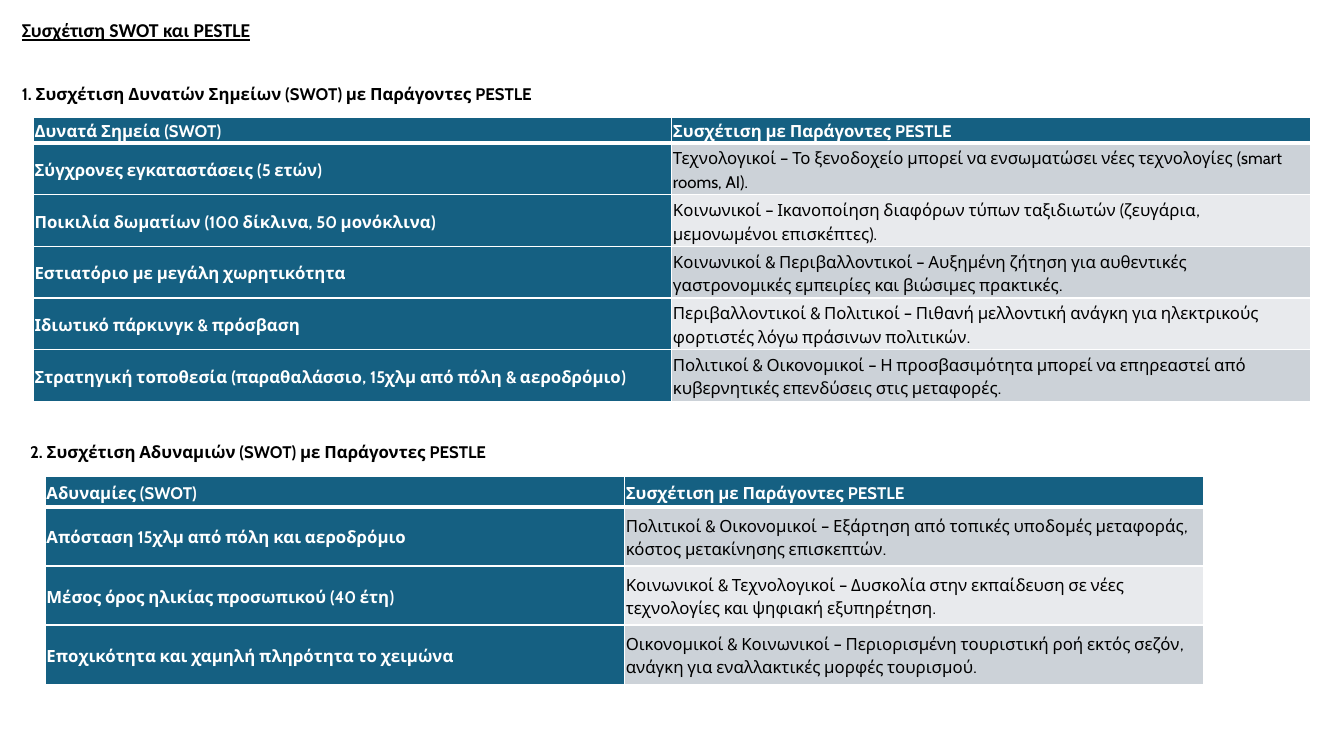
from lxml.etree import SubElement
from pptx import Presentation
from pptx.dml.color import RGBColor
from pptx.enum.text import MSO_ANCHOR
from pptx.oxml.ns import qn
from pptx.util import Cm, Pt


def style(p, size, name, color, bold=True):
    p.font.size, p.font.name, p.font.bold = Pt(size), name, bold
    p.font.color.rgb = RGBColor.from_string(color)


def add_text(s, text, x, y, w, h, size, name, anchor):
    tf = s.shapes.add_textbox(Cm(x), Cm(y), Cm(w), Cm(h)).text_frame
    tf.word_wrap = True
    tf.vertical_anchor = anchor
    p = tf.paragraphs[0]
    p.text = text
    style(p, size, name, "000000")
    return p


prs = Presentation()
prs.slide_width, prs.slide_height = Cm(33.87), Cm(19.05)
s = prs.slides.add_slide(prs.slide_layouts[6])

# Title
title = add_text(s, "Συσχέτιση SWOT και PESTLE", 0.3, 0.33, 33.27, 18.49,
                 14, "Calibri", MSO_ANCHOR.TOP)
title.font.underline = True

# Section heading (text, left, top), table (left, top, column width, row heights), rows
sections = [
    (("1. Συσχέτιση Δυνατών Σημείων (SWOT) με Παράγοντες PESTLE", 0.3, 1.73),
     (0.84, 2.95, 16.09, 0.66, 1.3),
     [("Δυνατά Σημεία (SWOT)", "Συσχέτιση με Παράγοντες PESTLE"),
      ("Σύγχρονες εγκαταστάσεις (5 ετών)",
       "Τεχνολογικοί – Το ξενοδοχείο μπορεί να ενσωματώσει νέες τεχνολογίες (smart rooms, AI)."),
      ("Ποικιλία δωματίων (100 δίκλινα, 50 μονόκλινα)",
       "Κοινωνικοί – Ικανοποίηση διαφόρων τύπων ταξιδιωτών (ζευγάρια, μεμονωμένοι επισκέπτες)."),
      ("Εστιατόριο με μεγάλη χωρητικότητα",
       "Κοινωνικοί & Περιβαλλοντικοί – Αυξημένη ζήτηση για αυθεντικές "
       "γαστρονομικές εμπειρίες και βιώσιμες πρακτικές."),
      ("Ιδιωτικό πάρκινγκ & πρόσβαση",
       "Περιβαλλοντικοί & Πολιτικοί – Πιθανή μελλοντική ανάγκη για ηλεκτρικούς "
       "φορτιστές λόγω πράσινων πολιτικών."),
      ("Στρατηγική τοποθεσία (παραθαλάσσιο, 15χλμ από πόλη & αεροδρόμιο)",
       "Πολιτικοί & Οικονομικοί – Η προσβασιμότητα μπορεί να επηρεαστεί από "
       "κυβερνητικές επενδύσεις στις μεταφορές.")]),
    (("2. Συσχέτιση Αδυναμιών (SWOT) με Παράγοντες PESTLE", 0.51, 10.74),
     (1.14, 12.01, 14.6, 0.76, 1.49),
     [("Αδυναμίες (SWOT)", "Συσχέτιση με Παράγοντες PESTLE"),
      ("Απόσταση 15χλμ από πόλη και αεροδρόμιο",
       "Πολιτικοί & Οικονομικοί – Εξάρτηση από τοπικές υποδομές μεταφοράς, "
       "κόστος μετακίνησης επισκεπτών."),
      ("Μέσος όρος ηλικίας προσωπικού (40 έτη)",
       "Κοινωνικοί & Τεχνολογικοί – Δυσκολία στην εκπαίδευση σε νέες "
       "τεχνολογίες και ψηφιακή εξυπηρέτηση."),
      ("Εποχικότητα και χαμηλή πληρότητα το χειμώνα",
       "Οικονομικοί & Κοινωνικοί – Περιορισμένη τουριστική ροή εκτός σεζόν, "
       "ανάγκη για εναλλακτικές μορφές τουρισμού.")]),
]

for (heading, hx, hy), (x, y, col_w, head_h, row_h), rows in sections:
    add_text(s, heading, hx, hy, 33.87, 1.27, 12, "Cabin", MSO_ANCHOR.MIDDLE)
    height = head_h + row_h * (len(rows) - 1)
    table = s.shapes.add_table(len(rows), 2, Cm(x), Cm(y), Cm(2 * col_w), Cm(height)).table
    for col in table.columns:
        col.width = Cm(col_w)
    for i, row in enumerate(rows):
        table.rows[i].height = Cm(row_h if i else head_h)
        for j, text in enumerate(row):
            cell = table.cell(i, j)
            cell.margin_left = cell.margin_right = Cm(0.03)
            cell.margin_top = cell.margin_bottom = Cm(0.03)
            cell.vertical_anchor = MSO_ANCHOR.MIDDLE
            p = cell.text_frame.paragraphs[0]
            p.text = text
            p.line_spacing, p.space_after = 1.15, Pt(8)

            # White borders, thicker under the header
            for side in "LRTB":
                thick = (i, side) in ((0, "B"), (1, "T"))
                ln = SubElement(cell._tc.get_or_add_tcPr(), qn(f"a:ln{side}"),
                                w=str(Pt(3 if thick else 1)))
                SubElement(SubElement(ln, qn("a:solidFill")), qn("a:srgbClr"), val="FFFFFF")

            # Dark header and first column, banded descriptions
            dark = i == 0 or j == 0
            fill = "156082" if dark else "CCD2D8" if i % 2 else "E8EAED"
            cell.fill.solid()
            cell.fill.fore_color.rgb = RGBColor.from_string(fill)
            style(p, 12, "Cabin", "FFFFFF" if dark else "000000", dark)

prs.save("out.pptx")
